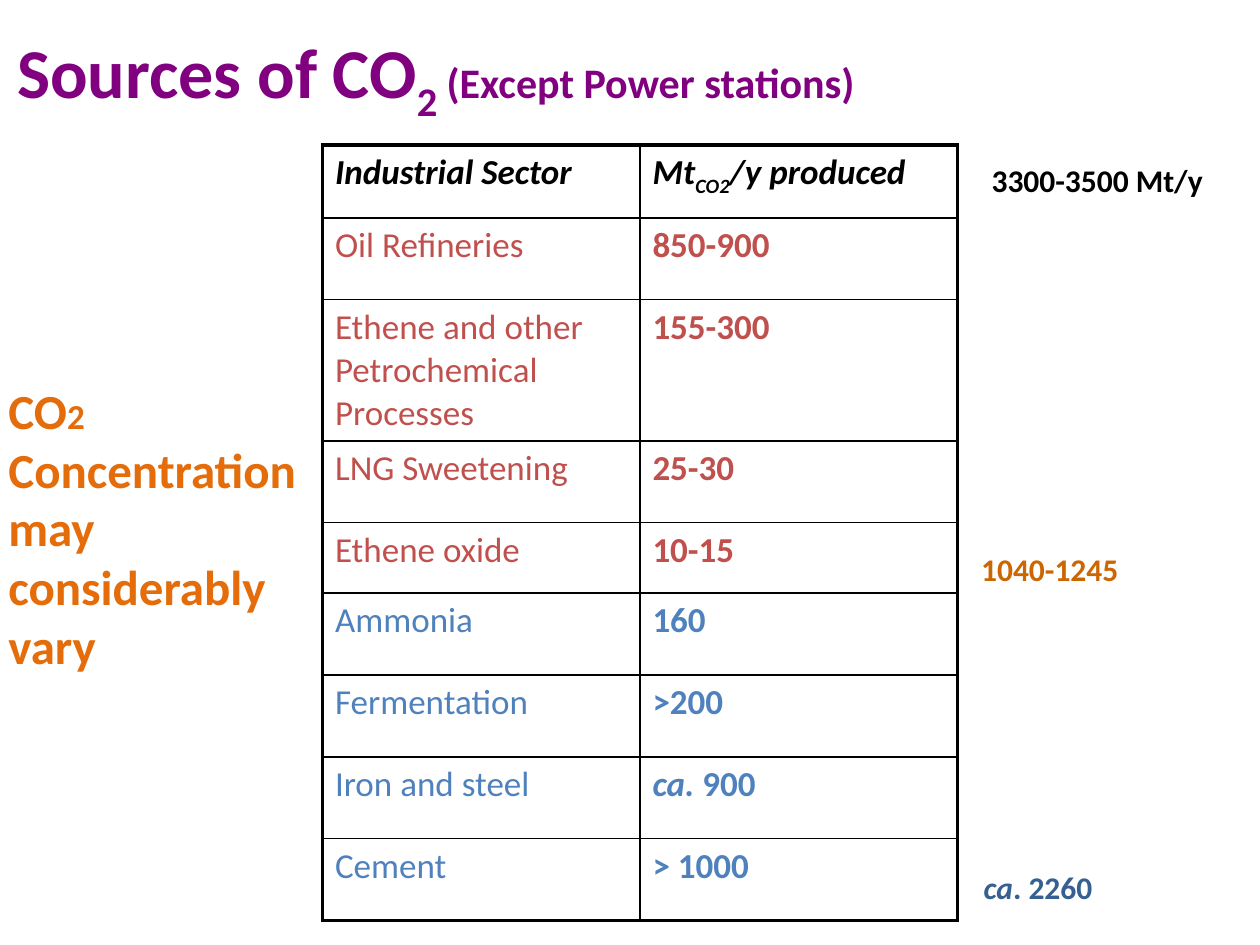
from lxml.etree import SubElement
from pptx import Presentation
from pptx.dml.color import RGBColor
from pptx.enum.text import MSO_ANCHOR as Anchor, MSO_AUTO_SIZE as AutoSize
from pptx.oxml.ns import qn
from pptx.util import Cm, Pt

FONT = "Calibri"
COLORS = {
    "title": "800080",
    "text": "000000",
    "line": "000000",
    "red": "C0504D",
    "blue": "4F81BD",
    "red_total": "CC6600",
    "blue_total": "376092",
    "remark": "E46C0A",
}
THICK, THIN = Pt(2.25), Pt(1)

# Sector, amount produced, colour of the row, row height in cm
SECTORS = [
    ("Oil Refineries", "850-900", "red", 1.65),
    ("Ethene and other Petrochemical Processes", "155-300", "red", 2.84),
    ("LNG Sweetening", "25-30", "red", 1.65),
    ("Ethene oxide", "10-15", "red", 1.42),
    ("Ammonia", "160", "blue", 1.65),
    ("Fermentation", ">200", "blue", 1.65),
    ("Iron and steel", [("ca. ", {"italic": True}), "900"], "blue", 1.65),
    ("Cement", "> 1000", "blue", 1.65),
]


def write(para, content, size, color, bold=True, italic=None):
    """Fill a paragraph with a string, or a list of strings and (text, style) pairs."""
    font = para.font
    font.name, font.size = FONT, Pt(size)
    font.bold, font.italic = bold, italic
    font.color.rgb = RGBColor.from_string(COLORS[color])
    for part in [content] if isinstance(content, str) else content:
        text, style = (part, {}) if isinstance(part, str) else part
        span = para.add_run()
        span.text = text
        if "size" in style:
            span.font.size = Pt(style["size"])
        if "italic" in style:
            span.font.italic = style["italic"]
        if style.get("sub"):
            span._r.get_or_add_rPr().set("baseline", "-25000")


def add_text(page, left, top, width, height, lines, size, color,
             wrap=False, anchor=Anchor.TOP, fit=AutoSize.SHAPE_TO_FIT_TEXT):
    box = page.shapes.add_textbox(Cm(left), Cm(top), Cm(width), Cm(height))
    frame = box.text_frame
    frame.word_wrap, frame.vertical_anchor, frame.auto_size = wrap, anchor, fit
    for index, line in enumerate(lines):
        para = frame.add_paragraph() if index else frame.paragraphs[0]
        write(para, line, size, color)


def set_borders(cell, widths):
    """Draw the left, right, top and bottom lines of a cell."""
    properties = cell._tc.get_or_add_tcPr()
    for side, width in zip("LRTB", widths):
        line = SubElement(properties, qn(f"a:ln{side}"), w=str(width))
        fill = SubElement(line, qn("a:solidFill"))
        SubElement(fill, qn("a:srgbClr"), val=COLORS["line"])


def add_sector_table(page):
    header = ("Industrial Sector",
              ["Mt", ("CO2", {"sub": True}), "/y produced"], "text", 1.47)
    rows = [header] + SECTORS
    heights = [row[3] for row in rows]
    table = page.shapes.add_table(len(rows), 2, Cm(6.5), Cm(2.92),
                                  Cm(12.8), Cm(sum(heights))).table
    table.first_row = table.horz_banding = False
    for column in table.columns:
        column.width = Cm(6.4)
    last = len(rows) - 1
    for r, (sector, amount, color, height) in enumerate(rows):
        table.rows[r].height = Cm(height)
        for c, content in enumerate((sector, amount)):
            cell = table.cell(r, c)
            is_header = r == 0
            write(cell.text_frame.paragraphs[0], content, 20, color,
                  bold=is_header or c == 1, italic=is_header)
            outer = (c == 0, c == 1, r == 0, r == last)
            set_borders(cell, [THICK if edge else THIN for edge in outer])
            cell.fill.background()


def main():
    deck = Presentation()
    deck.slide_width, deck.slide_height = Cm(25.4), Cm(19.05)
    page = deck.slides.add_slide(deck.slide_layouts[6])

    # Title
    title = ["Sources of CO", ("2 ", {"sub": True}),
             ("(Except Power stations)", {"size": 24})]
    add_text(page, 0.1, 0.56, 22.86, 1.96, [title], 40, "title",
             wrap=True, anchor=Anchor.MIDDLE, fit=AutoSize.NONE)

    # Table of sources
    add_sector_table(page)

    # Totals beside the table
    add_text(page, 19.53, 10.97, 3.58, 1.02, ["1040-1245"], 18, "red_total")
    add_text(page, 19.58, 17.37, 3.05, 1.02,
             [[("ca", {"italic": True}), ". 2260"]], 18, "blue_total")
    add_text(page, 19.74, 3.12, 5.16, 1.02, ["3300-3500 Mt/y"], 18, "text", wrap=True)

    # Remark on the left
    remark = [["CO", ("2", {"size": 20})],
              "Concentration", "may", "considerably", "vary"]
    add_text(page, -0.08, 7.54, 6.43, 6.25, remark, 28, "remark")

    deck.save("out.pptx")


if __name__ == "__main__":
    main()
